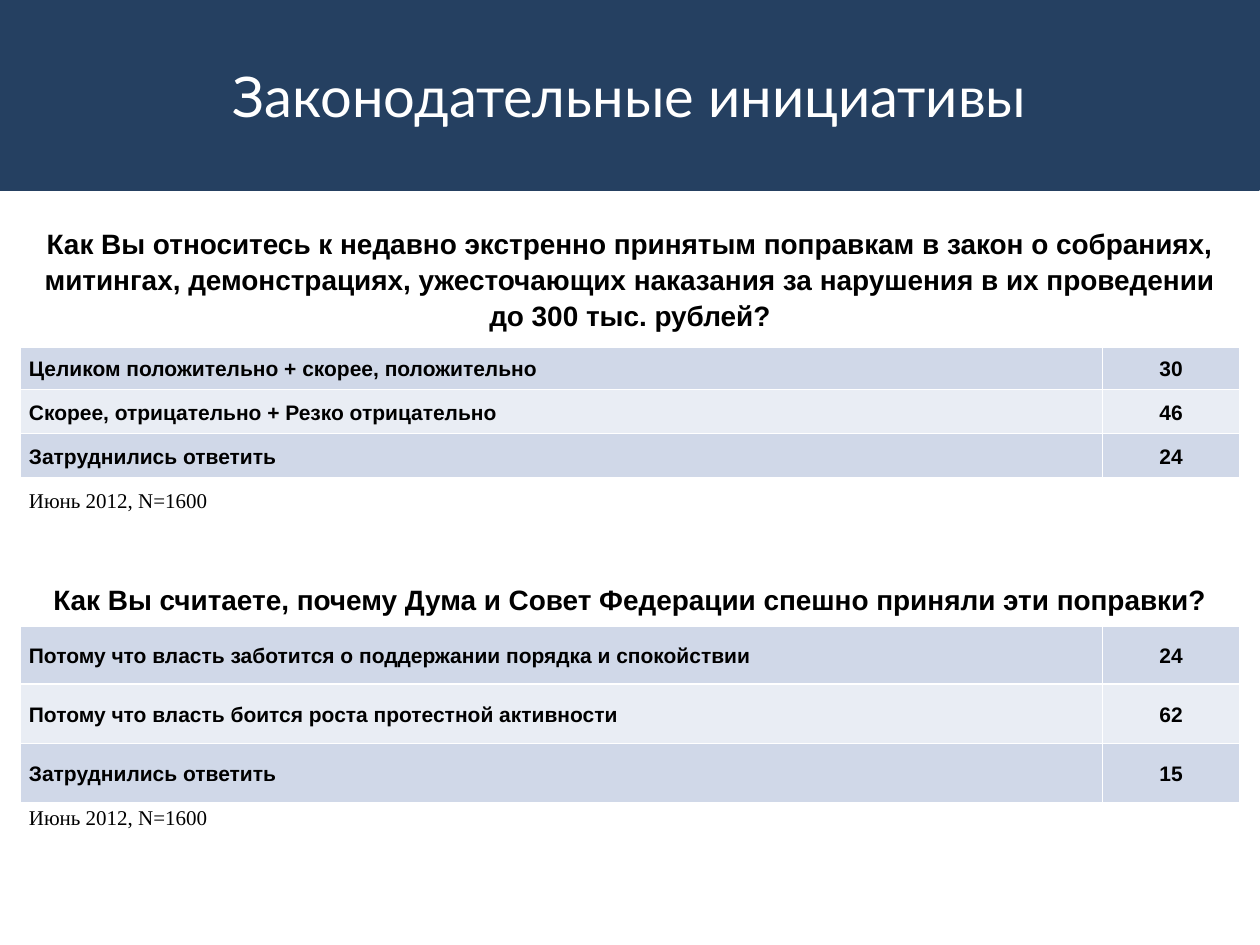
from dataclasses import dataclass

from lxml.etree import SubElement
from pptx import Presentation
from pptx.dml.color import RGBColor
from pptx.enum.shapes import MSO_SHAPE
from pptx.enum.text import MSO_ANCHOR as Anchor, PP_ALIGN as Align
from pptx.oxml.ns import qn
from pptx.util import Inches, Pt

NAVY, WHITE, BLACK = "254061", "FFFFFF", "000000"
BANDS = ["D0D8E8", "E9EDF4"]
COLUMN_WIDTHS = [8.59, 1.09]


@dataclass
class Survey:
    top: float
    row_heights: list[float]
    question: str
    question_spacing: float
    answers: list[tuple[str, int]]
    answer_gap: float
    note: str


SURVEYS = [
    Survey(
        1.68, [1.06, 0.35, 0.35, 0.35, 0.35],
        "Как Вы относитесь к недавно экстренно принятым поправкам в закон о собраниях, "
        "митингах, демонстрациях, ужесточающих наказания за нарушения в их проведении "
        "до 300 тыс. рублей?",
        1.15,
        [
            ("Целиком положительно + скорее, положительно", 30),
            ("Скорее, отрицательно + Резко отрицательно", 46),
            ("Затруднились ответить", 24),
        ],
        2, "Июнь 2012, N=1600",
    ),
    Survey(
        4.57, [0.39, 0.47, 0.47, 0.47, 0.22],
        "Как Вы считаете, почему Дума и Совет Федерации спешно приняли эти поправки?",
        1.0,
        [
            ("Потому что власть заботится о поддержании порядка и спокойствии", 24),
            ("Потому что власть боится роста протестной активности", 62),
            ("Затруднились ответить", 15),
        ],
        3, "Июнь 2012, N=1600",
    ),
]


def color(value: str) -> RGBColor:
    return RGBColor.from_string(value)


def write(text_frame, text: str, *, size=12, font="Arial", fill=BLACK, bold=True,
          align=Align.LEFT, spacing=1.15, gap=0) -> None:
    paragraph = text_frame.paragraphs[0]
    paragraph.alignment = align
    paragraph.line_spacing = spacing
    paragraph.space_before = paragraph.space_after = Pt(gap)
    run = paragraph.add_run()
    run.text = text
    run.font.size = Pt(size)
    run.font.name = font
    run.font.bold = bold
    run.font.color.rgb = color(fill)


def style_cell(cell, fill: str, top_width: float, bottom_width: float) -> None:
    cell.margin_left = cell.margin_right = Inches(0.07)
    cell.margin_top = cell.margin_bottom = 0
    cell.vertical_anchor = Anchor.MIDDLE
    properties = cell._tc.get_or_add_tcPr()
    widths = {"a:lnL": 1, "a:lnR": 1, "a:lnT": top_width, "a:lnB": bottom_width}
    for side, width in widths.items():
        line = SubElement(properties, qn(side), w=str(Pt(width)))
        SubElement(SubElement(line, qn("a:solidFill")), qn("a:srgbClr"), val=WHITE)
    cell.fill.solid()
    cell.fill.fore_color.rgb = color(fill)


def add_survey(slide, survey: Survey) -> None:
    row_count = len(survey.row_heights)
    table = slide.shapes.add_table(
        row_count, 2, Inches(0.16), Inches(survey.top),
        Inches(sum(COLUMN_WIDTHS)), Inches(sum(survey.row_heights)),
    ).table
    for column, width in zip(table.columns, COLUMN_WIDTHS):
        column.width = Inches(width)
    fills = [WHITE, *(BANDS[i % 2] for i in range(len(survey.answers))), WHITE]
    for i, (height, fill) in enumerate(zip(survey.row_heights, fills)):
        table.rows[i].height = Inches(height)
        for cell in table.rows[i].cells:
            style_cell(cell, fill, 3 if i == 1 else 1, 3 if i == 0 else 1)

    table.cell(0, 0).merge(table.cell(0, 1))
    write(table.cell(0, 0).text_frame, survey.question, size=16,
          align=Align.CENTER, spacing=survey.question_spacing)
    for i, (answer, percent) in enumerate(survey.answers, start=1):
        write(table.cell(i, 0).text_frame, answer, gap=survey.answer_gap)
        write(table.cell(i, 1).text_frame, str(percent), align=Align.CENTER, gap=2)
    last = row_count - 1
    write(table.cell(last, 0).text_frame, survey.note, font="Times New Roman", bold=False)
    empty_paragraph = table.cell(last, 1).text_frame.paragraphs[0]
    SubElement(empty_paragraph._p, qn("a:endParaRPr"), sz="1200")


def add_header(slide, title: str) -> None:
    banner = slide.shapes.add_shape(MSO_SHAPE.RECTANGLE, 0, 0, Inches(9.99), Inches(1.5))
    banner.shadow.inherit = False
    banner.fill.solid()
    banner.fill.fore_color.rgb = color(NAVY)
    banner.line.color.rgb = color(NAVY)
    banner.line.width = Pt(2)
    text_frame = slide.shapes.add_textbox(0, Inches(0.13), Inches(10), Inches(1.25)).text_frame
    text_frame.word_wrap = True
    text_frame.vertical_anchor = Anchor.MIDDLE
    write(text_frame, title, size=32, font="Lato", fill=WHITE, bold=False,
          align=Align.CENTER, spacing=1.0)


def main() -> None:
    presentation = Presentation()
    presentation.slide_width = Inches(10)
    presentation.slide_height = Inches(7.5)
    slide = presentation.slides.add_slide(presentation.slide_layouts[6])
    add_header(slide, "Законодательные инициативы")
    for survey in SURVEYS:
        add_survey(slide, survey)
    presentation.save("out.pptx")


if __name__ == "__main__":
    main()
